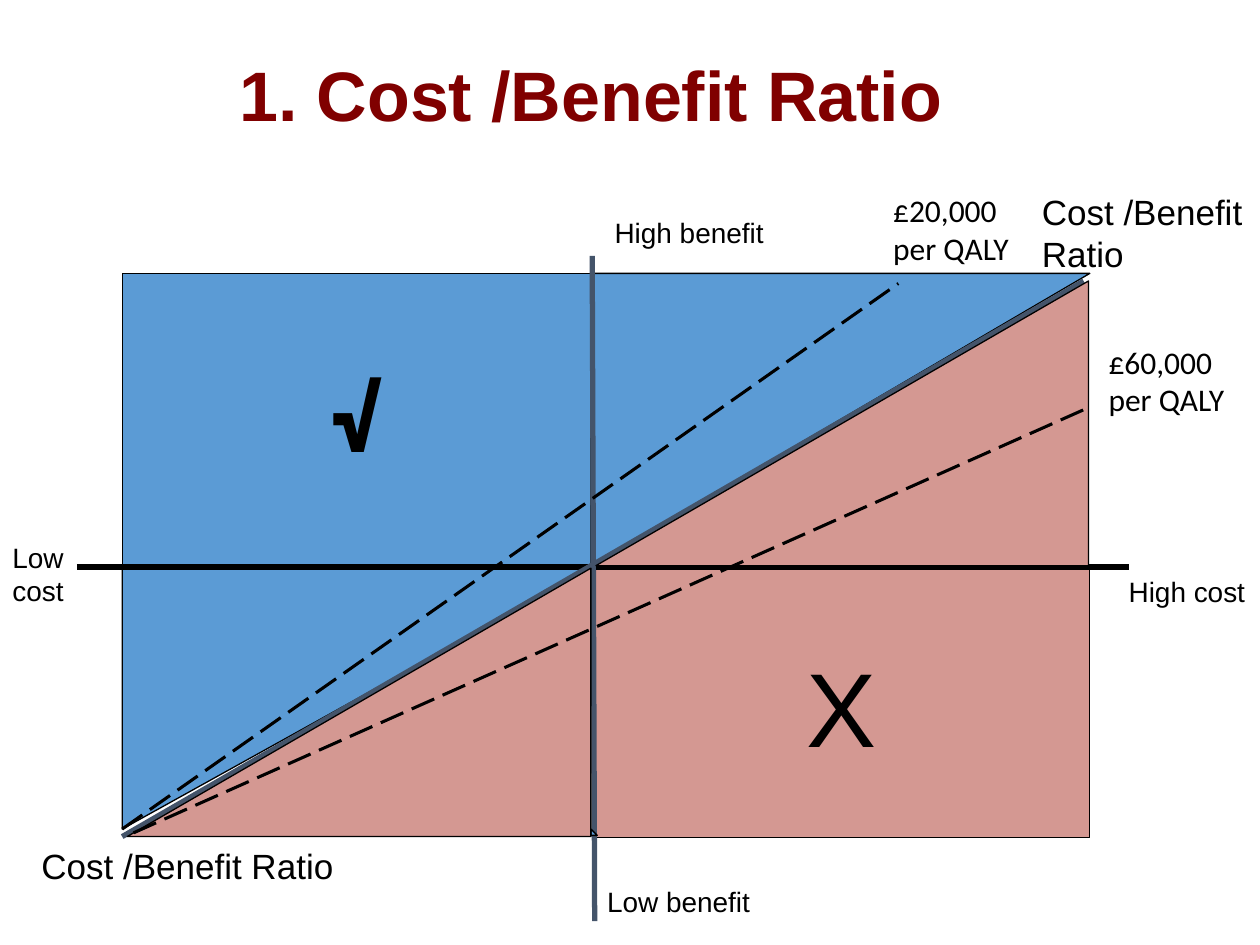
import pptx
import pptx.util
import pptx.dml.color
import pptx.enum.dml
import pptx.enum.shapes
import pptx.enum.text
import pptx.oxml
import pptx.oxml.ns

Inches = pptx.util.Inches
Pt = pptx.util.Pt
RGBColor = pptx.dml.color.RGBColor
BLACK = RGBColor(0x00, 0x00, 0x00)
BLUE = RGBColor(0x5B, 0x9B, 0xD5)
PINK = RGBColor(0xD4, 0x98, 0x92)
SLATE = RGBColor(0x44, 0x54, 0x6A)
MAROON = RGBColor(0x80, 0x00, 0x00)
RECTANGLE = pptx.enum.shapes.MSO_SHAPE.RECTANGLE
TRIANGLE = pptx.enum.shapes.MSO_SHAPE.RIGHT_TRIANGLE
LONG_DASH = pptx.enum.dml.MSO_LINE.LONG_DASH

presentation = pptx.Presentation()
presentation.slide_width = Inches(10)
presentation.slide_height = Inches(7.5)
slide = presentation.slides.add_slide(presentation.slide_layouts[6])


def add_areas(areas):
    """Add outlined areas: preset, box, fill, flip attribute."""
    for preset, box, fill, flip in areas:
        shape = slide.shapes.add_shape(preset, *map(Inches, box))
        shape.shadow.inherit = False
        shape.fill.solid()
        shape.fill.fore_color.rgb = fill
        shape.line.color.rgb = BLACK
        shape.line.width = Pt(0.75)
        if flip:
            shape.element.spPr.get_or_add_xfrm().set(flip, "1")
        mark = marks.get(box)
        if mark:
            frame = shape.text_frame
            frame.vertical_anchor = pptx.enum.text.MSO_ANCHOR.TOP
            frame.margin_top = Inches(0.59)
            paragraph = frame.paragraphs[0]
            paragraph.alignment = pptx.enum.text.PP_ALIGN.CENTER
            run = paragraph.add_run()
            run.text = mark["text"]
            run.font.color.rgb = BLACK
            for name, value in mark["font"].items():
                setattr(run.font, name, value)


def add_lines(lines):
    """Add straight lines: start, end, colour, width, dash."""
    for start, end, color, width, dash in lines:
        connector = slide.shapes.add_connector(
            pptx.enum.shapes.MSO_CONNECTOR.STRAIGHT, *map(Inches, start + end))
        connector.line.color.rgb = color
        connector.line.width = Pt(width)
        if dash:
            connector.line.dash_style = dash
        connector.element.spPr.append(
            pptx.oxml.parse_xml(f"<a:effectLst {pptx.oxml.ns.nsdecls('a')}/>"))


# Accept and reject quadrants carry a large mark
accept_box = (0.97, 2.17, 3.73, 2.32)
reject_box = (4.7, 4.51, 3.95, 2.14)
marks = {
    accept_box: {"text": "√", "font": {
        "name": "Roboto Condensed", "size": Pt(60), "bold": True}},
    reject_box: {"text": "X", "font": {"name": "Arial", "size": Pt(60)}},
}
add_areas([
    (RECTANGLE, accept_box, BLUE, None),
    (TRIANGLE, (0.97, 4.49, 3.77, 2.09), BLUE, "flipV"),
    (TRIANGLE, (4.69, 2.17, 3.96, 2.32), BLUE, "flipV"),
    (RECTANGLE, reject_box, PINK, None),
])

# Axes and the cost/benefit diagonal
add_lines([
    ((0.61, 4.5), (8.96, 4.5), BLACK, 3, None),
    ((4.7, 2.03), (4.72, 7.31), SLATE, 3, None),
    ((0.97, 6.64), (8.6, 2.23), SLATE, 3, None),
])

# Reject triangles below the diagonal
add_areas([
    (TRIANGLE, (4.69, 6.58, 0.05, 0.05), BLUE, None),
    (TRIANGLE, (1.01, 4.51, 3.68, 2.13), PINK, "flipH"),
    (TRIANGLE, (4.73, 2.23, 3.91, 2.26), PINK, "flipH"),
])

# Dashed threshold lines
add_lines([
    ((1.06, 6.61), (8.65, 3.23), BLACK, 1.75, LONG_DASH),
    ((0.97, 6.58), (7.13, 2.25), BLACK, 1.75, LONG_DASH),
])

# Title and labels: paragraphs, box, wrap, font values
axis_font = {"name": "Arial", "size": Pt(16)}
ratio_font = {"name": "Arial", "size": Pt(20)}
threshold_font = {"name": "Calibri", "size": Pt(18)}
title_font = {"name": "Arial", "size": Pt(40), "bold": True}
labels = [
    (["1. Cost /Benefit Ratio"], (1.8, 0.36, 6, 0.77), False, title_font, MAROON),
    (["Low cost"], (0, 4.24, 1.01, 0.64), True, axis_font, BLACK),
    (["High cost"], (8.86, 4.51, 1.14, 0.37), False, axis_font, BLACK),
    (["High benefit"], (4.78, 1.66, 1.4, 0.37), False, axis_font, BLACK),
    (["Low benefit"], (4.72, 6.97, 1.35, 0.37), False, axis_font, BLACK),
    (["Cost /Benefit", "Ratio"], (8.17, 1.46, 2.6, 0.77), True, ratio_font, BLACK),
    (["Cost /Benefit Ratio"], (0.23, 6.65, 2.54, 0.44), False, ratio_font, BLACK),
    (["£60,000", "per QALY"], (8.7, 2.67, 1.13, 0.71), False, threshold_font, BLACK),
    (["£20,000", "per QALY"], (6.99, 1.47, 1.17, 0.64), False, threshold_font, BLACK),
]
for lines, box, wrap, font, color in labels:
    frame = slide.shapes.add_textbox(*map(Inches, box)).text_frame
    frame.word_wrap = wrap
    frame.text = "\n".join(lines)
    for paragraph in frame.paragraphs:
        run = paragraph.runs[0]
        run.font.color.rgb = color
        for name, value in font.items():
            setattr(run.font, name, value)

presentation.save("out.pptx")
